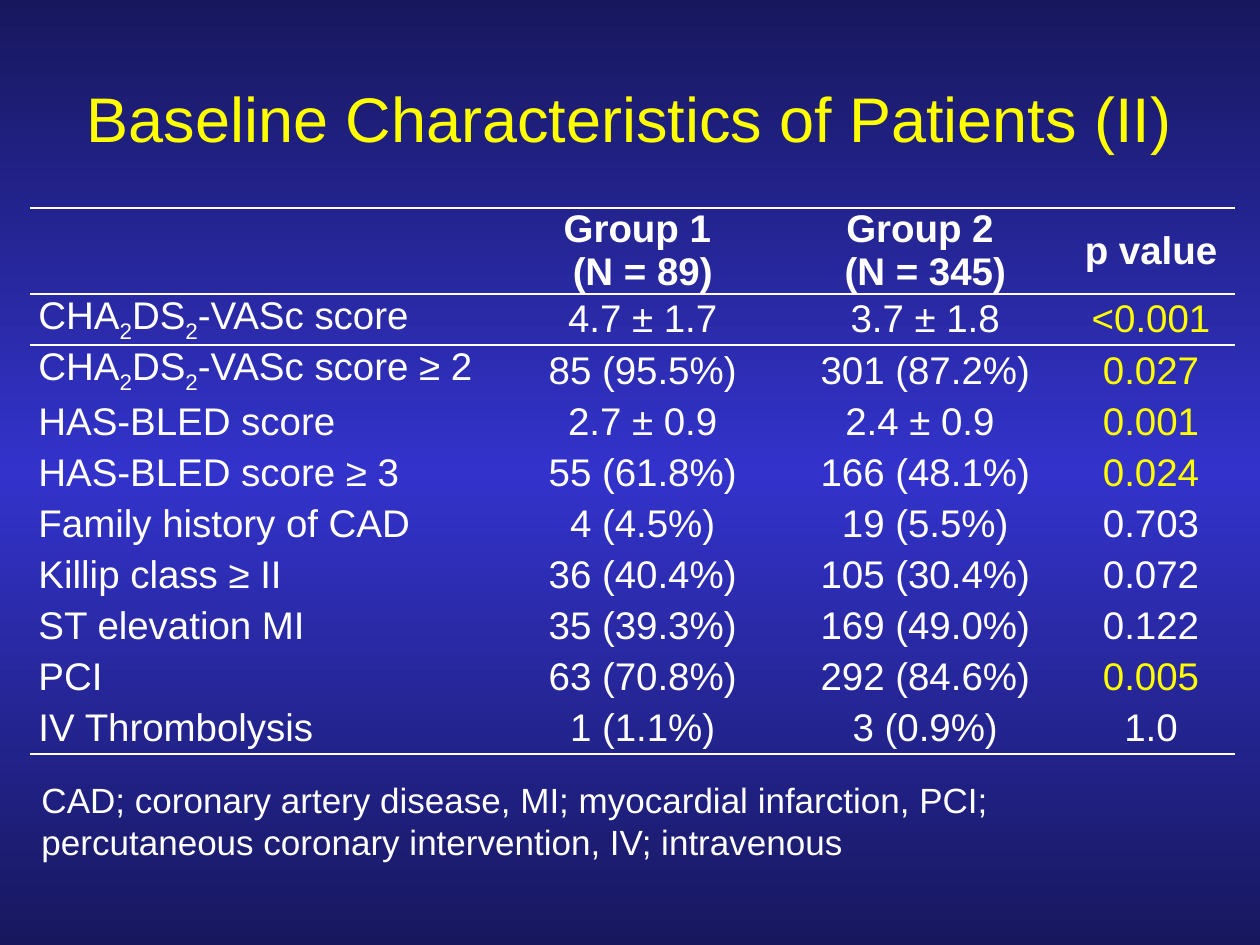
from copy import deepcopy

from lxml.etree import SubElement
from pptx import Presentation
from pptx.dml.color import RGBColor
from pptx.enum.text import MSO_ANCHOR, MSO_AUTO_SIZE, PP_ALIGN
from pptx.oxml.ns import qn
from pptx.util import Pt

WHITE = RGBColor(0xFF, 0xFF, 0xFF)
YELLOW = RGBColor(0xFF, 0xFF, 0x00)
NAVY = RGBColor(0x17, 0x17, 0x5E)
BLUE = RGBColor(0x33, 0x33, 0xCC)
FONT = "Arial"
NO_STYLE_NO_GRID = "{2D5ABB26-0587-4C30-8999-92F81FD0307C}"

TITLE = "Baseline Characteristics of Patients (II)"
HEADER = [(), ("Group 1 ", "(N = 89)"), ("Group 2 ", "(N = 345)"), ("p value",)]
# Every second part of a label is a subscript.
ROWS = [
    (("CHA", "2", "DS", "2", "-VASc score"), "4.7 ± 1.7", "3.7 ± 1.8", "<0.001"),
    (("CHA", "2", "DS", "2", "-VASc score ≥ 2"), "85 (95.5%)", "301 (87.2%)", "0.027"),
    (("HAS-BLED score",), "2.7 ± 0.9", "2.4 ± 0.9 ", "0.001"),
    (("HAS-BLED score ≥ 3",), "55 (61.8%)", "166 (48.1%)", "0.024"),
    (("Family history of CAD",), "4 (4.5%)", "19 (5.5%)", "0.703"),
    (("Killip class ≥ II",), "36 (40.4%)", "105 (30.4%)", "0.072"),
    (("ST elevation MI",), "35 (39.3%)", "169 (49.0%)", "0.122"),
    (("PCI",), "63 (70.8%)", "292 (84.6%)", "0.005"),
    (("IV Thrombolysis",), "1 (1.1%)", "3 (0.9%)", "1.0"),
]
ABBREVIATIONS = ("CAD; coronary artery disease, MI; myocardial infarction, PCI; "
                 "percutaneous coronary intervention, IV; intravenous")

COLUMN_WIDTHS = [269.5, 161.5, 161.5, 96.5]
HEADER_HEIGHT = 49
ROW_HEIGHT = 29.2
SIGNIFICANCE = 0.05


def add_run(paragraph, text, size, color=WHITE, bold=False, subscript=False):
    run = paragraph.add_run()
    run.text = text
    font = run.font
    font.name, font.size, font.bold = FONT, Pt(size), bold
    font.color.rgb = color
    if subscript:
        run._r.get_or_add_rPr().set("baseline", "-25000")


def add_rule(cell, side):
    line = SubElement(cell._tc.get_or_add_tcPr(), qn(f"a:{side}"), w=str(Pt(1.5)))
    fill = SubElement(line, qn("a:solidFill"))
    SubElement(fill, qn("a:srgbClr"), val=str(WHITE))


def paint_background(slide):
    fill = slide.background.fill
    fill.gradient()
    fill.gradient_angle = 270
    stops = next(slide.element.iter(qn("a:gsLst")))
    stops.append(deepcopy(stops[0]))
    for stop, position, color in zip(fill.gradient_stops, (0, 0.5, 1), (NAVY, BLUE, NAVY)):
        stop.position = position
        stop.color.rgb = color


def add_title(slide):
    title = slide.shapes.title
    title.left, title.top, title.width, title.height = Pt(36), Pt(39.6), Pt(647.3), Pt(54.7)
    title.text_frame.vertical_anchor = MSO_ANCHOR.MIDDLE
    title.text_frame.auto_size = MSO_AUTO_SIZE.NONE
    paragraph = title.text_frame.paragraphs[0]
    paragraph.alignment = PP_ALIGN.CENTER
    add_run(paragraph, TITLE, 36, YELLOW)


def format_cell(cell, row, last_row):
    cell.margin_left = cell.margin_right = Pt(5)
    cell.margin_top = cell.margin_bottom = 0
    cell.vertical_anchor = MSO_ANCHOR.MIDDLE
    if row <= 1:
        add_rule(cell, "lnT")
    if row in (0, last_row):
        add_rule(cell, "lnB")
    cell.fill.background()


def add_characteristics(slide):
    height = HEADER_HEIGHT + ROW_HEIGHT * len(ROWS)
    frame = slide.shapes.add_table(len(ROWS) + 1, len(HEADER), Pt(17), Pt(118.8),
                                   Pt(sum(COLUMN_WIDTHS)), Pt(height))
    table = frame.table
    table.first_row = table.horz_banding = False
    next(table._tbl.iter(qn("a:tableStyleId"))).text = NO_STYLE_NO_GRID
    for column, width in zip(table.columns, COLUMN_WIDTHS):
        column.width = Pt(width)
    for index, row in enumerate(table.rows):
        row.height = Pt(ROW_HEIGHT if index else HEADER_HEIGHT)
        for cell in row.cells:
            format_cell(cell, index, len(ROWS))

    for column, lines in enumerate(HEADER):
        text_frame = table.cell(0, column).text_frame
        for number, line in enumerate(lines):
            paragraph = text_frame.add_paragraph() if number else text_frame.paragraphs[0]
            paragraph.alignment = PP_ALIGN.CENTER
            add_run(paragraph, line, 22, bold=True)

    for index, (label, *values) in enumerate(ROWS, start=1):
        paragraph = table.cell(index, 0).text_frame.paragraphs[0]
        paragraph.alignment = PP_ALIGN.JUSTIFY
        for number, part in enumerate(label):
            add_run(paragraph, part, 22, subscript=number % 2 == 1)
        significant = float(values[-1].lstrip("<")) < SIGNIFICANCE
        colors = (WHITE, WHITE, YELLOW if significant else WHITE)
        for column, (value, color) in enumerate(zip(values, colors), start=1):
            paragraph = table.cell(index, column).text_frame.paragraphs[0]
            paragraph.alignment = PP_ALIGN.CENTER
            add_run(paragraph, value, 22, color)


def add_abbreviations(slide):
    footnote = slide.shapes.add_textbox(Pt(16.6), Pt(441.4), Pt(675.4), Pt(55.4)).text_frame
    footnote.word_wrap = True
    footnote.auto_size = MSO_AUTO_SIZE.SHAPE_TO_FIT_TEXT
    add_run(footnote.paragraphs[0], ABBREVIATIONS, 20)


def main():
    presentation = Presentation()
    presentation.slide_width, presentation.slide_height = Pt(720), Pt(540)
    slide = presentation.slides.add_slide(presentation.slide_layouts[5])
    paint_background(slide)
    add_title(slide)
    add_characteristics(slide)
    add_abbreviations(slide)
    presentation.save("out.pptx")


if __name__ == "__main__":
    main()
